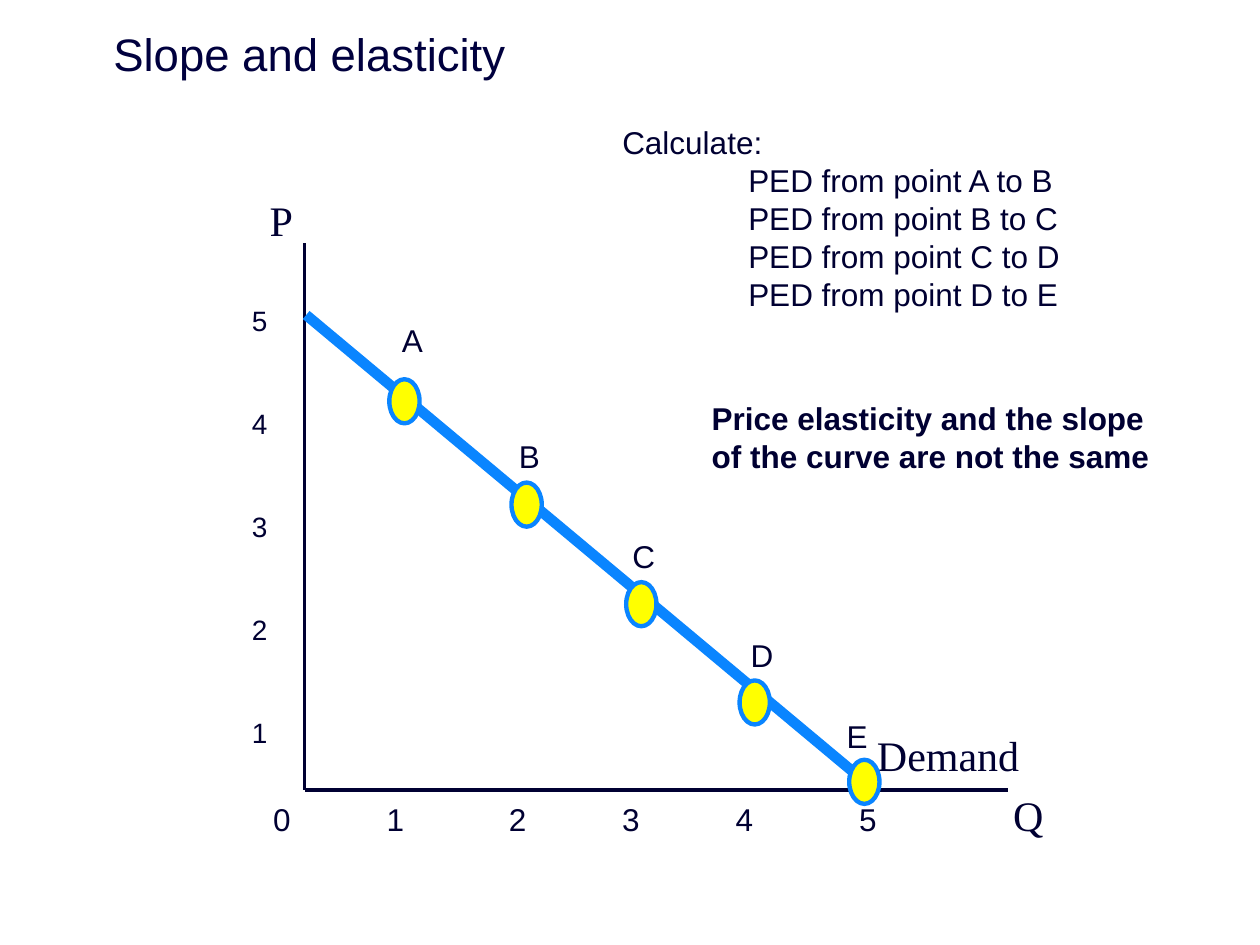
from lxml import etree
from pptx import Presentation
from pptx import util as u
from pptx.dml.color import RGBColor
from pptx.enum import shapes, text
from pptx.oxml.ns import qn

PX = 9144  # EMU per px, 100 px to the inch
NAVY, TITLE_NAVY, BLUE, YELLOW = "000032", "00003E", "0A85FF", "FFFF00"

BODY = {"name": "Arial", "size": u.Pt(18)}
TITLE = {"name": "Arial", "size": u.Pt(26)}
TICK = {"name": "Arial", "size": u.Pt(16)}
SERIF = {"name": "Times New Roman", "size": u.Pt(24)}

INSETS = (10, 5, 10, 5)
AXIS_INSETS = (4, 0, 0, 0)


def rgb(value):
    return RGBColor.from_string(value)


def px(*values):
    return [int(v * PX) for v in values]


def set_all(obj, values):
    for name, value in values.items():
        setattr(obj, name, value)


class Canvas:
    def __init__(self, slide):
        self.s = slide

    def text(self, box, lines, font=BODY, color=NAVY, insets=INSETS,
             anchor=text.MSO_ANCHOR.TOP, spacing=None, gap=0, tabs=()):
        """Add a text box; gap is the space in points between paragraphs."""
        tf = self.s.shapes.add_textbox(*px(*box)).text_frame
        left, top, right, bottom = px(*insets)
        set_all(tf, {"word_wrap": True, "vertical_anchor": anchor,
                     "margin_left": left, "margin_top": top,
                     "margin_right": right, "margin_bottom": bottom})
        for i, line in enumerate(lines):
            p = tf.add_paragraph() if i else tf.paragraphs[0]
            if spacing:
                p.line_spacing = spacing
            if i and gap:
                p.space_before = u.Pt(gap)
            if tabs:
                self.tab_stops(p, tabs)
            r = p.add_run()
            r.text = line
            set_all(r.font, font)
            r.font.color.rgb = rgb(color)

    def tab_stops(self, p, positions):
        tab_list = etree.SubElement(p._p.get_or_add_pPr(), qn("a:tabLst"))
        for pos in px(*positions):
            etree.SubElement(tab_list, qn("a:tab"), pos=str(pos), algn="l")

    def line(self, start, end, color, width):
        sp = self.s.shapes.add_connector(
            shapes.MSO_CONNECTOR.STRAIGHT, *px(*start, *end))
        sp.line.color.rgb = rgb(color)
        sp.line.width = u.Pt(width)
        etree.SubElement(sp._element.spPr, qn("a:effectLst"))

    def point(self, left, top):
        sp = self.s.shapes.add_shape(
            shapes.MSO_SHAPE.OVAL, *px(left, top, 24, 35))
        sp.shadow.inherit = False
        sp.fill.solid()
        sp.fill.fore_color.rgb = rgb(YELLOW)
        sp.line.color.rgb = rgb(BLUE)
        sp.line.width = u.Pt(2.5)


def main():
    prs = Presentation()
    prs.slide_width, prs.slide_height = px(1000, 750)
    c = Canvas(prs.slides.add_slide(prs.slide_layouts[6]))

    c.text((50, -9, 933, 102), ["Slope and elasticity"], TITLE, TITLE_NAVY,
           insets=(40, 5, 14, 5), anchor=text.MSO_ANCHOR.MIDDLE)

    # Axes and demand curve
    origin = (242, 627)
    c.line((242, 193), origin, NAVY, 1.75)
    c.line(origin, (800, 627), NAVY, 1.75)
    for name, box in (("Demand", (692, 579, 130, 47)),
                      ("Q", (800, 627, 33, 40)),
                      ("P", (210, 154, 28, 40))):
        c.text(box, [name], SERIF, insets=AXIS_INSETS)
    c.line((243, 250), (692, 625), BLUE, 6)

    # Axis values
    c.text((190, 223, 66, 374), "54321", TICK, spacing=1.5, gap=30)
    c.text((207, 630, 610, 40), ["\t".join("012345")],
           tabs=(90, 187, 277, 367, 465))

    # Points on the curve: name, marker corner, label corner
    for name, marker, label in (("A", (309, 301), (309, 250)),
                                ("B", (406, 383), (402, 342)),
                                ("C", (497, 462), (492, 421)),
                                ("D", (587, 540), (586, 500)),
                                ("E", (674, 603), (662, 564))):
        c.point(*marker)
        c.text((*label, 49, 40), [name])

    steps = [f"\tPED from point {a} to {b}" for a, b in zip("ABCD", "BCDE")]
    c.text((484, 93, 425, 162), ["Calculate:"] + steps, tabs=(100,))
    c.text((555, 312, 378, 71),
           ["Price elasticity and the slope of the curve are not the same"],
           {**BODY, "bold": True})

    prs.save("out.pptx")


if __name__ == "__main__":
    main()
